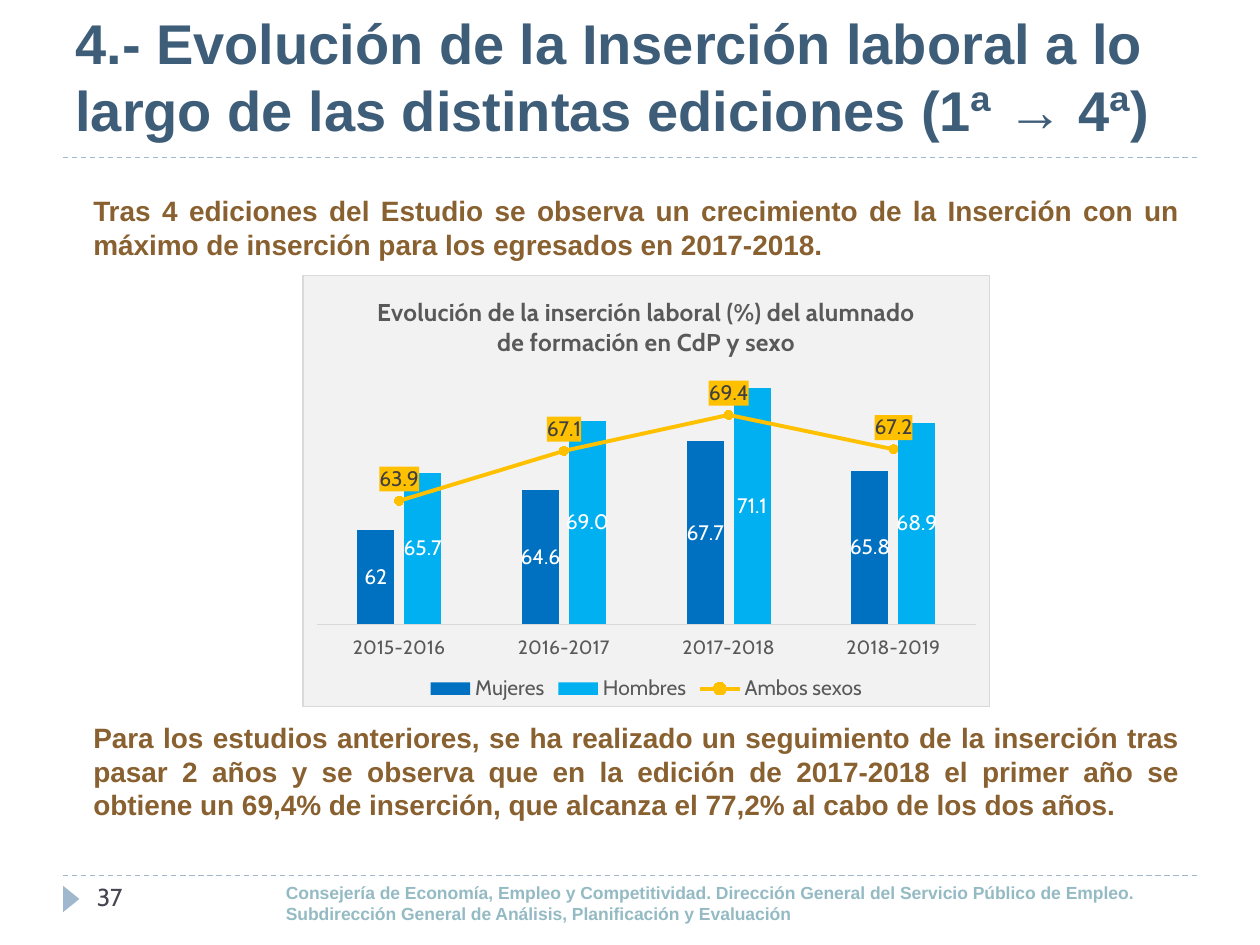
from lxml.etree import SubElement
from pptx import Presentation
from pptx.chart.data import CategoryChartData
from pptx.dml.color import RGBColor
from pptx.enum.chart import (XL_CHART_TYPE, XL_LABEL_POSITION, XL_LEGEND_POSITION,
                             XL_MARKER_STYLE, XL_TICK_LABEL_POSITION, XL_TICK_MARK)
from pptx.enum.dml import MSO_LINE
from pptx.enum.shapes import MSO_CONNECTOR, MSO_SHAPE
from pptx.enum.text import MSO_ANCHOR, PP_ALIGN
from pptx.oxml import parse_xml
from pptx.oxml.ns import nsdecls, qn
from pptx.util import Inches, Pt

RULE = RGBColor(0x9F, 0xB8, 0xCD)
TEAL = RGBColor(0x94, 0xBA, 0xC3)
SLATE = RGBColor(0x46, 0x46, 0x53)
NAVY = RGBColor(0x3E, 0x5D, 0x78)
BROWN = RGBColor(0x89, 0x60, 0x2F)
BLUE = RGBColor(0x00, 0x70, 0xC0)
SKY = RGBColor(0x00, 0xB0, 0xF0)
GOLD = RGBColor(0xFF, 0xC0, 0x00)
WHITE = RGBColor(0xFF, 0xFF, 0xFF)
BLACK = RGBColor(0, 0, 0)
DARK = RGBColor(0x40, 0x40, 0x40)
GREY = RGBColor(0x59, 0x59, 0x59)
PALE = RGBColor(0xF2, 0xF2, 0xF2)
SILVER = RGBColor(0xD9, 0xD9, 0xD9)

YEARS = ["2015-2016", "2016-2017", "2017-2018", "2018-2019"]
# name, values, colour, label colour, label place, label format
SERIES = [
    ("Mujeres", (62, 64.6, 67.7, 65.8), BLUE, WHITE, XL_LABEL_POSITION.CENTER, "General"),
    ("Hombres", (65.7, 69, 71.1, 68.9), SKY, WHITE, XL_LABEL_POSITION.CENTER, "0.0"),
    ("Ambos sexos", (63.9, 67.1, 69.4, 67.2), GOLD, DARK, XL_LABEL_POSITION.ABOVE, "General"),
]


def apply(target, values):
    for name, value in values.items():
        setattr(target, name, value)


def fill_xml(color):
    return f'<a:solidFill><a:srgbClr val="{color}"/></a:solidFill>'


class Maker:
    body = "Arial"
    chart_face = "Cabin"

    def __init__(self, slide):
        self.slide = slide
        self.shapes = slide.shapes

    def font(self, font, size, color, bold=False, face=None):
        apply(font, {"name": face or self.body, "size": Pt(size), "bold": bold})
        font.color.rgb = color

    def rule(self, y):
        line = self.shapes.add_connector(
            MSO_CONNECTOR.STRAIGHT, Inches(0.5), Inches(y), Inches(9.5), Inches(y))
        apply(line.line, {"width": Pt(0.75), "dash_style": MSO_LINE.DASH})
        line.line.color.rgb = RULE
        SubElement(line._element.spPr, qn("a:effectLst"))

    def arrow(self, *box):
        shape = self.shapes.add_shape(MSO_SHAPE.ISOSCELES_TRIANGLE, *map(Inches, box))
        shape.rotation = 90
        shape.shadow.inherit = False
        shape.fill.solid()
        shape.fill.fore_color.rgb = RULE
        shape.line.fill.background()

    def text(self, box, lines, size, color, bold=True, face=None,
             align=PP_ALIGN.LEFT, anchor=MSO_ANCHOR.TOP, inset=0.1):
        frame = self.shapes.add_textbox(*map(Inches, box)).text_frame
        apply(frame, {"word_wrap": True, "vertical_anchor": anchor,
                      "margin_left": Inches(inset)})
        for i, line in enumerate(lines):
            para = frame.add_paragraph() if i else frame.paragraphs[0]
            para.alignment = align
            run = para.add_run()
            run.text = line
            self.font(run.font, size, color, bold, face)

    def chart(self, box, title):
        data = CategoryChartData()
        data.categories = YEARS
        for name, values, *_ in SERIES:
            data.add_series(name, values)
        chart = self.shapes.add_chart(
            XL_CHART_TYPE.COLUMN_CLUSTERED, *map(Inches, box), data).chart
        self.font(chart.font, 10, BLACK, face=self.chart_face)

        # Title and legend
        chart.has_title = True
        run = chart.chart_title.text_frame.paragraphs[0].add_run()
        run.text = title
        self.font(run.font, 14, GREY, True, self.chart_face)
        chart.has_legend = True
        apply(chart.legend, {"position": XL_LEGEND_POSITION.BOTTOM,
                             "include_in_layout": False})
        self.font(chart.legend.font, 12, GREY, face=self.chart_face)

        # Axes
        years, scale = chart.category_axis, chart.value_axis
        apply(years, {"major_tick_mark": XL_TICK_MARK.NONE,
                      "tick_label_position": XL_TICK_LABEL_POSITION.LOW})
        years.format.line.width = Pt(0.75)
        years.format.line.color.rgb = SILVER
        self.font(years.tick_labels.font, 11, GREY, face=self.chart_face)
        apply(scale, {"visible": False, "has_major_gridlines": False,
                      "minimum_scale": 56, "maximum_scale": 72})

        # Columns, then the line
        apply(chart.plots[0], {"gap_width": 219, "overlap": -27,
                               "vary_by_categories": False})
        self.split(chart)
        for series, (_, _, color, ink, place, form) in zip(chart.series, SERIES):
            labels = series.data_labels
            apply(labels, {"show_value": True, "position": place,
                           "number_format": form, "number_format_is_linked": False})
            self.font(labels.font, 12, ink, face=self.chart_face)
            if color != GOLD:
                series.invert_if_negative = False
                series.format.fill.solid()
                series.format.fill.fore_color.rgb = color
                continue
            series.smooth = False
            series.format.line.width = Pt(2.25)
            series.format.line.color.rgb = color
            apply(series.marker, {"style": XL_MARKER_STYLE.CIRCLE, "size": 5})
            series.marker.format.fill.solid()
            series.marker.format.fill.fore_color.rgb = color
            series.marker.format.line.color.rgb = color
            labels._element.find(qn("c:numFmt")).addnext(parse_xml(
                f'<c:spPr {nsdecls("c", "a")}>{fill_xml(color)}</c:spPr>'))
        self.frame(chart)

    def split(self, chart):
        """Move the last series to a line plot on the same axes."""
        bars = chart.plots[0]._element
        line = parse_xml(
            f'<c:lineChart {nsdecls("c")}><c:grouping val="standard"/>'
            '<c:varyColors val="0"/><c:marker val="1"/></c:lineChart>')
        moved = bars.findall(qn("c:ser"))[-1]
        for flag in moved.findall(qn("c:invertIfNegative")):
            moved.remove(flag)
        line.insert(2, moved)
        for axis in bars.findall(qn("c:axId")):
            SubElement(line, qn("c:axId")).set("val", axis.get("val"))
        bars.addnext(line)

    def frame(self, chart):
        """Place the plot area; fill and outline the chart."""
        spots = {"x": 0.02, "y": 0.23, "w": 0.96, "h": 0.58}
        parts = "".join(f'<c:{key} val="{val}"/>' for key, val in spots.items())
        space = chart._chartSpace
        body = space.find(qn("c:chart"))
        area = body.find(qn("c:plotArea"))
        for old in area.findall(qn("c:layout")):
            area.remove(old)
        area.insert(0, parse_xml(
            f'<c:layout {nsdecls("c")}><c:manualLayout><c:layoutTarget val="inner"/>'
            '<c:xMode val="edge"/><c:yMode val="edge"/>'
            f'{parts}</c:manualLayout></c:layout>'))
        body.addnext(parse_xml(
            f'<c:spPr {nsdecls("c", "a")}>{fill_xml(PALE)}'
            f'<a:ln w="{int(Pt(0.75))}">{fill_xml(SILVER)}</a:ln></c:spPr>'))


def main():
    deck = Presentation()
    apply(deck, {"slide_width": Inches(10), "slide_height": Inches(7.5)})
    page = Maker(deck.slides.add_slide(deck.slide_layouts[6]))

    # Rules and footer
    for y in (6.95, 1.25):
        page.rule(y)
    page.arrow(0.46, 7.07, 0.21, 0.13)
    page.text((2.17, 6.95, 7.21, 0.44), [
        "Consejería de Economía, Empleo y Competitividad. Dirección General del Servicio Público de Empleo.",
        "Subdirección General de Análisis, Planificación y Evaluación",
    ], 10, TEAL, anchor=MSO_ANCHOR.MIDDLE)
    page.text((0.67, 6.95, 1.4, 0.4), ["37"], 14, SLATE, False, page.chart_face)

    # Title
    page.text((0.5, 0, 9, 1.18), [
        "4.- Evolución de la Inserción laboral a lo largo de las distintas ediciones (1ª → 4ª)",
    ], 32, NAVY, anchor=MSO_ANCHOR.BOTTOM)

    # Text above and below the chart
    notes = [
        (1.49, 0.65, "Tras 4 ediciones del Estudio se observa un crecimiento de la Inserción "
         "con un máximo de inserción para los egresados en 2017-2018."),
        (5.67, 0.9, "Para los estudios anteriores, se ha realizado un seguimiento de la inserción "
         "tras pasar 2 años y se observa que en la edición de 2017-2018 el primer año se "
         "obtiene un 69,4% de inserción, que alcanza el 77,2% al cabo de los dos años."),
    ]
    for top, height, note in notes:
        page.text((0.44, top, 9.02, height), [note], 16, BROWN,
                  align=PP_ALIGN.JUSTIFY, inset=0.3)

    # Chart
    page.chart((2.4, 2.18, 5.46, 3.43),
               "Evolución de la inserción laboral (%) del alumnado de formación en CdP y sexo")
    deck.save("out.pptx")


if __name__ == "__main__":
    main()
